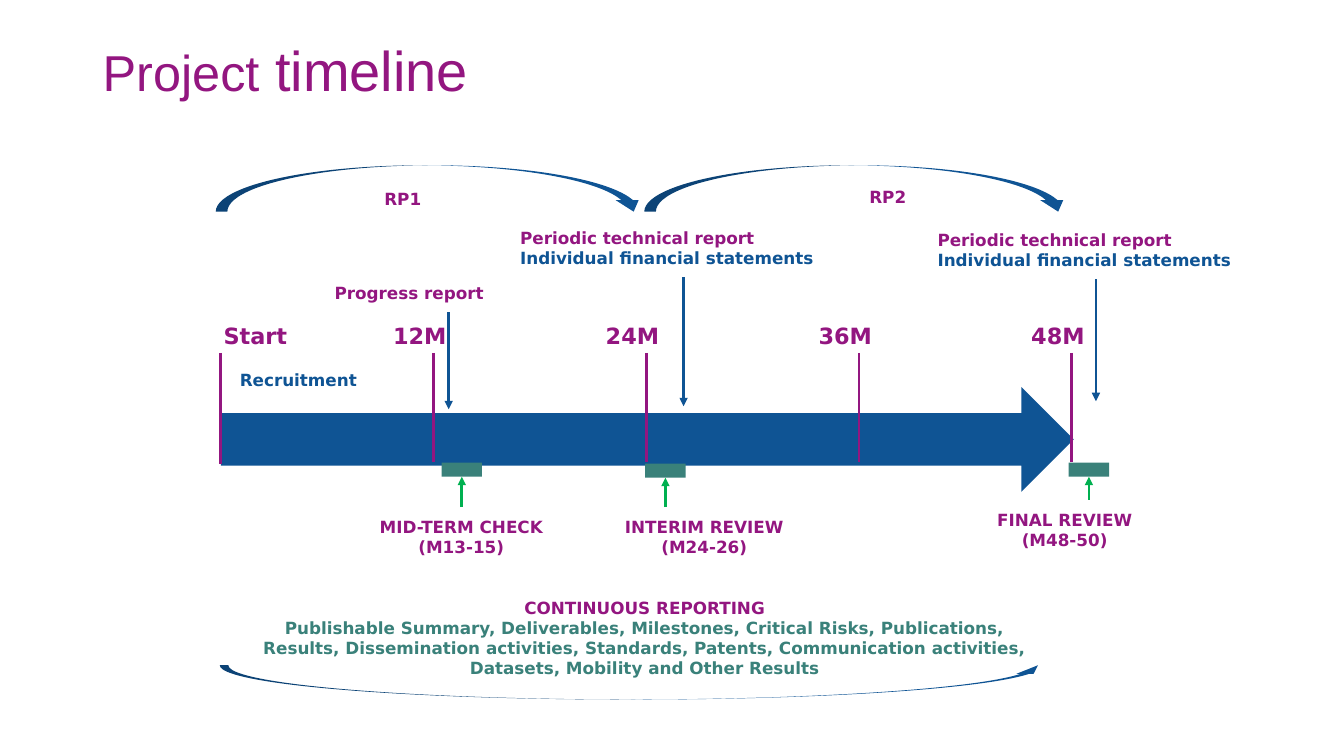
import pptx
import pptx.util
import pptx.dml.color
import pptx.enum.shapes
import pptx.enum.text
from dataclasses import dataclass
from lxml import etree
from pptx.oxml.ns import qn

SHAPE = pptx.enum.shapes.MSO_SHAPE
ALIGN = pptx.enum.text.PP_ALIGN


@dataclass(frozen=True)
class Theme:
    purple: str = "931680"
    blue: str = "0F5494"
    teal: str = "3A817A"
    green: str = "00B050"
    title_font: str = "Arial"
    body_font: str = "DejaVu Sans"
    title_size: int = 36
    title_big: int = 40
    month_size: int = 16
    body_size: int = 12
    line: int = 2


T = Theme()


def grid(n):
    """Length of n grid units; columns and rows are one inch each."""
    return pptx.util.Inches(n)


def rgb(value):
    return pptx.dml.color.RGBColor.from_string(value)


def add_text(s, box, lines, size=T.body_size, align=ALIGN.LEFT, wrap=True):
    """Bold label; lines is a list of (text, colour) paragraphs."""
    tf = s.shapes.add_textbox(*map(grid, box)).text_frame
    tf.word_wrap = wrap
    tf.text = "\n".join(text for text, _ in lines)
    for p, (_, colour) in zip(tf.paragraphs, lines):
        p.alignment = align
        font = p.runs[0].font
        font.name, font.size, font.bold = T.body_font, pptx.util.Pt(size), True
        font.color.rgb = rgb(colour)


def add_block(s, kind, box, colour):
    sp = s.shapes.add_shape(kind, *map(grid, box))
    sp.shadow.inherit = False
    sp.fill.solid()
    sp.fill.fore_color.rgb = rgb(colour)
    sp.line.fill.background()
    return sp


def add_line(s, x, y1, y2, colour, arrow=False):
    """Vertical line from y1 to y2."""
    line = s.shapes.add_connector(pptx.enum.shapes.MSO_CONNECTOR.STRAIGHT,
                                  grid(x), grid(y1), grid(x), grid(y2))
    line.line.color.rgb = rgb(colour)
    line.line.width = pptx.util.Pt(T.line)
    if arrow:
        etree.SubElement(line.line._get_or_add_ln(), qn("a:tailEnd"), type="triangle")
    etree.SubElement(line._element.spPr, qn("a:effectLst"))
    return line


def draw_title(s, box):
    tf = s.shapes.add_textbox(*map(grid, box)).text_frame
    tf.word_wrap = True
    tf.vertical_anchor = pptx.enum.text.MSO_ANCHOR.BOTTOM
    tf.margin_bottom = 0
    p = tf.paragraphs[0]
    p.line_spacing = 0.9
    for text, size in (("Project", T.title_size), (" timeline", T.title_big)):
        r = p.add_run()
        r.text = text
        r.font.name, r.font.size = T.title_font, pptx.util.Pt(size)
        r.font.color.rgb = rgb(T.purple)


def draw_axis(s, box, months):
    """Wide arrow with a tick and a label at each equal step."""
    x, y, w, h = box
    add_block(s, SHAPE.RIGHT_ARROW, (x, y + 0.69, w, h - 0.69), T.blue)
    step = (w - 0.02) / (len(months) - 1)
    for i, month in enumerate(months):
        tick = x + i * step
        add_line(s, tick, y + 0.35, y + (1.43 if i else 1.45), T.purple)
        label = (tick - 0.5, y, 0.73, 0.37) if i else (tick - 0.07, y, 0.94, 0.37)
        add_text(s, label, [(month, T.purple)], T.month_size, wrap=i == 0)
    add_text(s, (x + 0.09, y + 0.47, 1.58, 0.3), [("Recruitment", T.blue)])


def draw_period(s, box, name, label_x, label_y):
    """Curved arrow over one reporting period, with its name below the arc."""
    x, y, w, h = box
    add_block(s, SHAPE.CURVED_DOWN_ARROW, box, T.blue)
    add_text(s, (x + label_x, y + label_y, 2.25, 0.3), [(name, T.purple)],
             align=ALIGN.CENTER)


def draw_report(s, box, lines, arrow_x, arrow_end):
    """Report label with an arrow down to the axis."""
    x, y, w, h = box
    add_text(s, box, lines)
    add_line(s, x + arrow_x, y + h + 0.04, arrow_end, T.blue, arrow=True)


def draw_review(s, box, lines, block_x, block_y):
    """Review label with an arrow up to its block on the axis."""
    x, y, w, h = box
    block = add_block(s, SHAPE.RECTANGLE, (x + block_x, block_y, 0.4, 0.14), T.teal)
    arrow = add_line(s, x + block_x + 0.2, y - 0.05, block_y + 0.14, T.green, arrow=True)
    arrow.end_connect(block, 2)
    add_text(s, box, [(line, T.purple) for line in lines], align=ALIGN.CENTER)


def draw_continuous(s, box):
    """Reporting list over a long curved arrow."""
    x, y, w, h = box
    add_text(s, (x + 0.33, y, w - 0.43, h), [
        ("CONTINUOUS REPORTING", T.purple),
        ("Publishable Summary, Deliverables, Milestones, Critical Risks, Publications, "
         "Results, Dissemination activities, Standards, Patents, Communication "
         "activities, Datasets, Mobility and Other Results", T.teal),
    ], align=ALIGN.CENTER)
    add_block(s, SHAPE.CURVED_UP_ARROW, (x, y + 0.72, w, 0.34), T.blue)


def main():
    prs = pptx.Presentation()
    prs.slide_width, prs.slide_height = grid(13.33), grid(7.5)
    s = prs.slides.add_slide(prs.slide_layouts[6])

    draw_title(s, (0.92, 0.51, 11.5, 0.52))
    draw_axis(s, (2.19, 3.15, 8.46, 1.73), ["Start", "12M", "24M", "36M", "48M"])

    # Reporting periods
    draw_period(s, (2.14, 1.64, 4.26, 0.46), "RP1", 0.73, 0.18)
    draw_period(s, (6.39, 1.64, 4.22, 0.46), "RP2", 1.29, 0.16)

    # Reports above the axis
    periodic = [("Periodic technical report", T.purple),
                ("Individual financial statements", T.blue)]
    draw_report(s, (3.22, 2.76, 2.43, 0.3), [("Progress report", T.purple)], 1.23, 4.06)
    draw_report(s, (5.06, 2.21, 3.48, 0.5), periodic, 1.72, 4.03)
    draw_report(s, (9.2, 2.23, 4.28, 0.5), periodic, 1.67, 3.98)

    # Reviews below the axis
    draw_review(s, (3.45, 5.08, 2.25, 0.5), ["MID-TERM CHECK (M13-15)"], 0.93, 4.59)
    draw_review(s, (5.86, 5.08, 2.25, 0.5), ["INTERIM REVIEW", "(M24-26)"], 0.54, 4.6)
    draw_review(s, (9.48, 5.01, 2.16, 0.5), ["FINAL REVIEW", "(M48-50)"], 1.12, 4.59)

    draw_continuous(s, (2.18, 5.88, 8.2, 1.11))
    prs.save("out.pptx")


if __name__ == "__main__":
    main()
